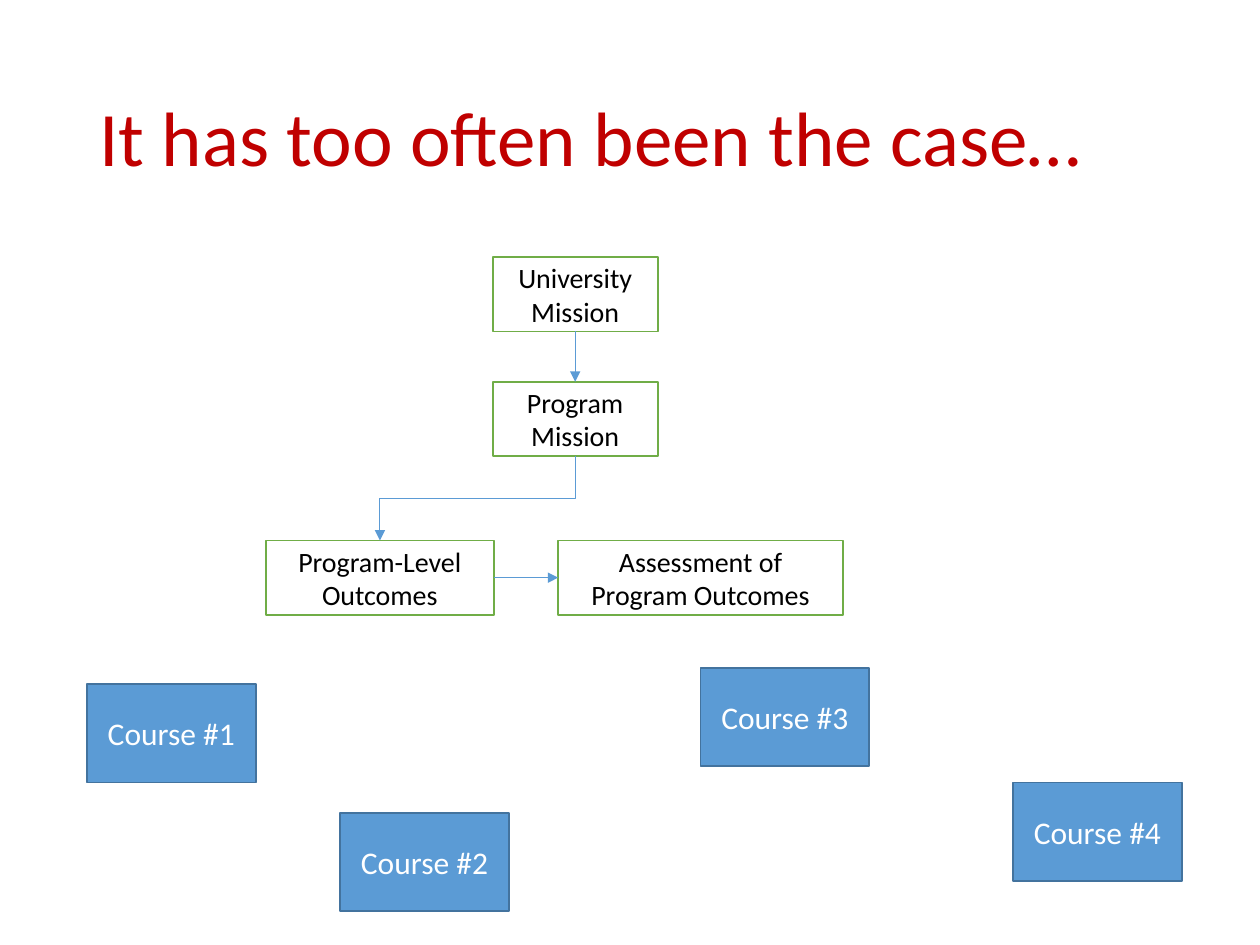
from lxml.etree import SubElement
from pptx import Presentation
from pptx.dml.color import RGBColor
from pptx.enum.shapes import MSO_CONNECTOR, MSO_SHAPE
from pptx.enum.text import MSO_ANCHOR, PP_ALIGN
from pptx.oxml.ns import qn
from pptx.util import Inches, Pt

FONT = "Calibri"
RED, WHITE, BLACK = "C00000", "FFFFFF", "000000"
GREEN, BLUE, DARK_BLUE = "70AD47", "5B9BD5", "43739E"
TOP, LEFT, BOTTOM, RIGHT = range(4)
STEP_HEIGHT = 0.59
COURSES = [
    ("Course #1", 0.69, 5.43),
    ("Course #3", 5.56, 5.3),
    ("Course #4", 8.04, 6.21),
    ("Course #2", 2.7, 6.45),
]


def color(value):
    return RGBColor.from_string(value)


def format_paragraph(para, size, text_color, alignment):
    para.alignment = alignment
    para.font.name = FONT
    para.font.size = Pt(size)
    para.font.color.rgb = color(text_color)


def set_title(page, text):
    title = page.shapes.title
    title.left, title.top = Inches(0.69), Inches(0.4)
    title.width, title.height = Inches(8.62), Inches(1.45)
    title.text_frame.text = text
    title.text_frame.vertical_anchor = MSO_ANCHOR.MIDDLE
    para = title.text_frame.paragraphs[0]
    para.line_spacing = 0.9
    format_paragraph(para, 44, RED, PP_ALIGN.LEFT)


def add_box(page, kind, text, place, fill, line, size, text_color):
    box = page.shapes.add_shape(kind, *map(Inches, place))
    box.shadow.inherit = False
    box.fill.solid()
    box.fill.fore_color.rgb = color(fill)
    box.line.color.rgb = color(line)
    box.line.width = Pt(1)
    frame = box.text_frame
    frame.word_wrap = True
    frame.vertical_anchor = MSO_ANCHOR.MIDDLE
    frame.text = text
    for para in frame.paragraphs:
        format_paragraph(para, size, text_color, PP_ALIGN.CENTER)
    return box


def add_step(page, text, left, top, width):
    place = (left, top, width, STEP_HEIGHT)
    return add_box(page, MSO_SHAPE.FLOWCHART_PROCESS, text, place, WHITE, GREEN, 16, BLACK)


def add_course(page, text, left, top):
    place = (left, top, 1.34, 0.78)
    add_box(page, MSO_SHAPE.RECTANGLE, text, place, BLUE, DARK_BLUE, 18, WHITE)


def add_arrow(page, kind, start_x, start_y, end_x, end_y):
    arrow = page.shapes.add_connector(kind, start_x, start_y, end_x, end_y)
    arrow.line.color.rgb = color(BLUE)
    arrow.line.width = Pt(0.5)
    SubElement(arrow.line._get_or_add_ln(), qn("a:tailEnd"), type="triangle")
    SubElement(arrow._element.spPr, qn("a:effectLst"))
    return arrow


def join_straight(page, source, source_side, target, target_side):
    arrow = add_arrow(page, MSO_CONNECTOR.STRAIGHT, 0, 0, 0, 0)
    arrow.begin_connect(source, source_side)
    arrow.end_connect(target, target_side)


def join_elbow_down(page, source, target):
    start_x, start_y = source.left + source.width // 2, source.top + source.height
    end_x, end_y = target.left + target.width // 2, target.top
    center_x, center_y = (start_x + end_x) // 2, (start_y + end_y) // 2
    half_drop, half_run = (end_y - start_y) // 2, (start_x - end_x) // 2
    arrow = add_arrow(
        page, MSO_CONNECTOR.ELBOW,
        center_x - half_drop, center_y - half_run,
        center_x + half_drop, center_y + half_run,
    )
    arrow._element.spPr.find(qn("a:xfrm")).set("rot", str(90 * 60000))


def main():
    deck = Presentation()
    deck.slide_width, deck.slide_height = Inches(10), Inches(7.5)
    page = deck.slides.add_slide(deck.slide_layouts[5])
    set_title(page, "It has too often been the case…")

    university = add_step(page, "University Mission", 3.91, 2.04, 1.31)
    program = add_step(page, "Program Mission", 3.91, 3.03, 1.31)
    outcomes = add_step(page, "Program-Level\nOutcomes", 2.11, 4.29, 1.81)
    assessment = add_step(page, "Assessment of Program Outcomes", 4.43, 4.29, 2.26)

    join_straight(page, university, BOTTOM, program, TOP)
    join_elbow_down(page, program, outcomes)
    join_straight(page, outcomes, RIGHT, assessment, LEFT)

    for course in COURSES:
        add_course(page, *course)
    deck.save("out.pptx")


if __name__ == "__main__":
    main()
